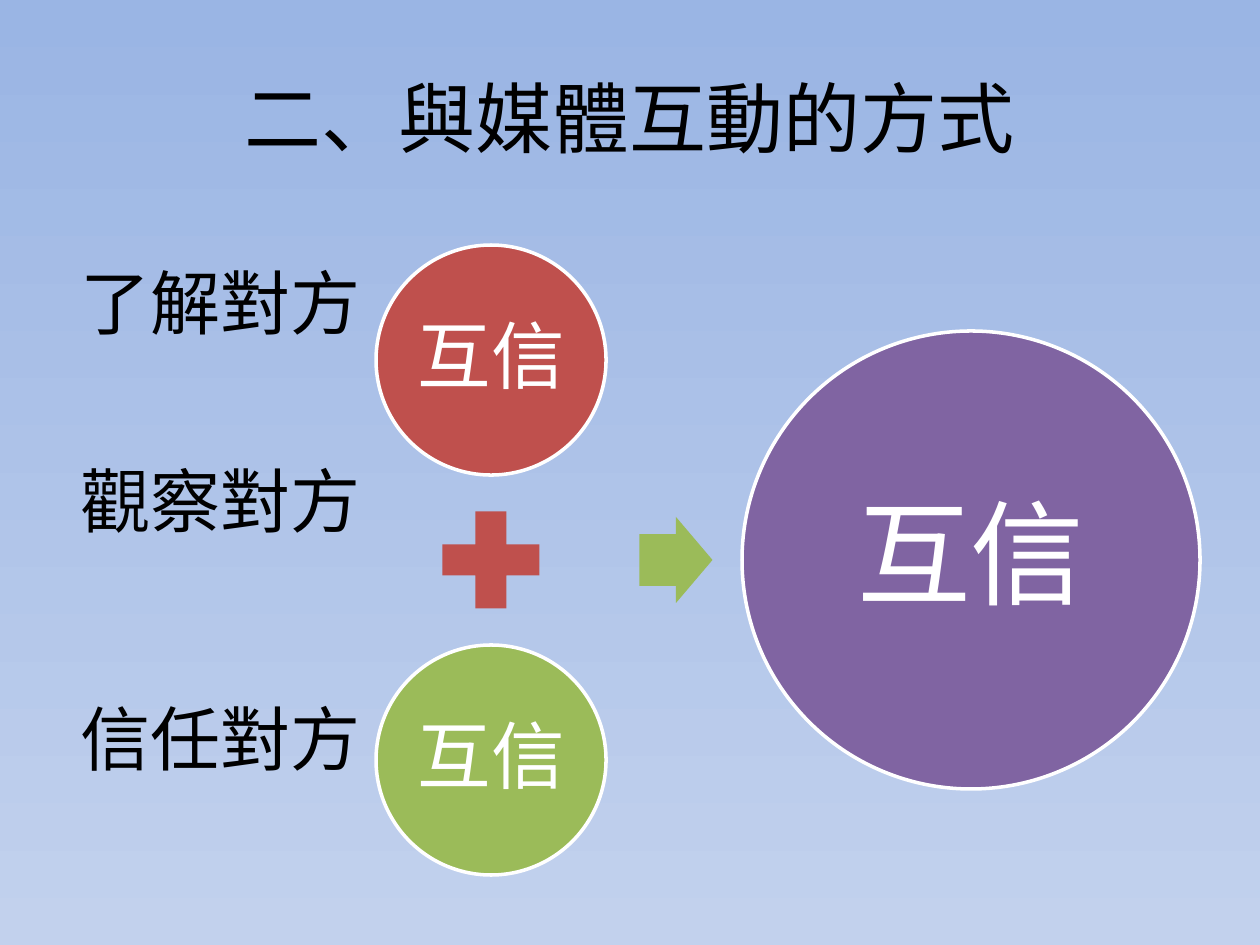
from pptx import Presentation
from pptx.dml.color import RGBColor
from pptx.enum.shapes import MSO_SHAPE
from pptx.enum.text import MSO_ANCHOR, PP_ALIGN
from pptx.util import Emu, Pt

BLACK = RGBColor(0x00, 0x00, 0x00)
WHITE = RGBColor(0xFF, 0xFF, 0xFF)
RED = RGBColor(0xBF, 0x50, 0x4D)
GREEN = RGBColor(0x9B, 0xBB, 0x59)
PURPLE = RGBColor(0x80, 0x64, 0xA2)
SKY_TOP = RGBColor(0x9A, 0xB5, 0xE4)
SKY_BOTTOM = RGBColor(0xC2, 0xD1, 0xED)

TITLE_FONT = "Arial"
BODY_FONT = "Calibri"
TITLE_ONLY = 5


def px(length):
    """Turn pixels at 126 to the inch into EMU."""
    return Emu(round(length * 914400 / 126))


class SlideBuilder:
    """Hold the style and the current slide."""

    def __init__(self, deck):
        self.slide = deck.slides.add_slide(deck.slide_layouts[TITLE_ONLY])

    def background(self, top, bottom):
        """Fill the slide with a gradient running downwards."""
        fill = self.slide.background.fill
        fill.gradient()
        fill.gradient_angle = 270
        for stop, color, position in zip(fill.gradient_stops, (top, bottom), (0, 1)):
            stop.color.rgb = color
            stop.position = position

    def add_text(self, frame, text, size, color, font=BODY_FONT, align=PP_ALIGN.LEFT):
        """Put one formatted run into the first paragraph."""
        para = frame.paragraphs[0]
        para.alignment = align
        span = para.add_run()
        span.text = text
        span.font.name = font
        span.font.size = Pt(size)
        span.font.color.rgb = color
        return para

    def title(self, text):
        """Place the title placeholder."""
        box = self.slide.shapes.title
        box.left, box.top, box.width, box.height = map(px, (63, 38, 1134, 158))
        box.text_frame.vertical_anchor = MSO_ANCHOR.MIDDLE
        self.add_text(box.text_frame, text, 44, BLACK, TITLE_FONT, PP_ALIGN.CENTER)

    def label(self, text, left, top):
        """Add a plain text label."""
        box = self.slide.shapes.add_textbox(px(left), px(top), px(309), px(97))
        box.text_frame.word_wrap = True
        self.add_text(box.text_frame, text, 40, BLACK)

    def symbol(self, kind, center_x, center_y, width, height, color, adjustments=()):
        """Add a filled shape around a center point."""
        shape = self.slide.shapes.add_shape(
            kind, px(center_x - width / 2), px(center_y - height / 2), px(width), px(height)
        )
        shape.shadow.inherit = False
        shape.fill.solid()
        shape.fill.fore_color.rgb = color
        shape.line.fill.background()
        for index, value in enumerate(adjustments):
            shape.adjustments[index] = value
        return shape

    def circle(self, text, center_x, center_y, diameter, color, size, inset):
        """Add a white-rimmed circle with centered text."""
        shape = self.symbol(MSO_SHAPE.OVAL, center_x, center_y, diameter, diameter, color)
        shape.line.color.rgb = WHITE
        shape.line.width = Pt(2)
        frame = shape.text_frame
        frame.word_wrap = False
        frame.vertical_anchor = MSO_ANCHOR.MIDDLE
        frame.margin_left = frame.margin_right = px(inset)
        frame.margin_top = frame.margin_bottom = px(inset)
        para = self.add_text(frame, text, size, WHITE, align=PP_ALIGN.CENTER)
        para.line_spacing = 0.9


def main():
    """Build the slide and save it."""
    deck = Presentation()
    deck.slide_width, deck.slide_height = px(1260), px(945)
    page = SlideBuilder(deck)
    page.background(SKY_TOP, SKY_BOTTOM)
    page.title("二、與媒體互動的方式")

    column, middle, step = 491, 560, 200
    page.circle("互信", column, middle - step, 230, RED, 42, 8)
    page.symbol(MSO_SHAPE.MATH_PLUS, column, middle, 132, 132, RED, [0.235])
    page.circle("互信", column, middle + step, 230, GREEN, 42, 8)
    page.symbol(MSO_SHAPE.RIGHT_ARROW, 676, middle, 73, 86, GREEN, [0.6, 0.5])
    page.circle("互信", 971, middle, 458, PURPLE, 65, 11)

    for text, top in (("了解對方", 253), ("觀察對方", 451), ("信任對方", 689)):
        page.label(text, 68, top)

    deck.save("out.pptx")


if __name__ == "__main__":
    main()
